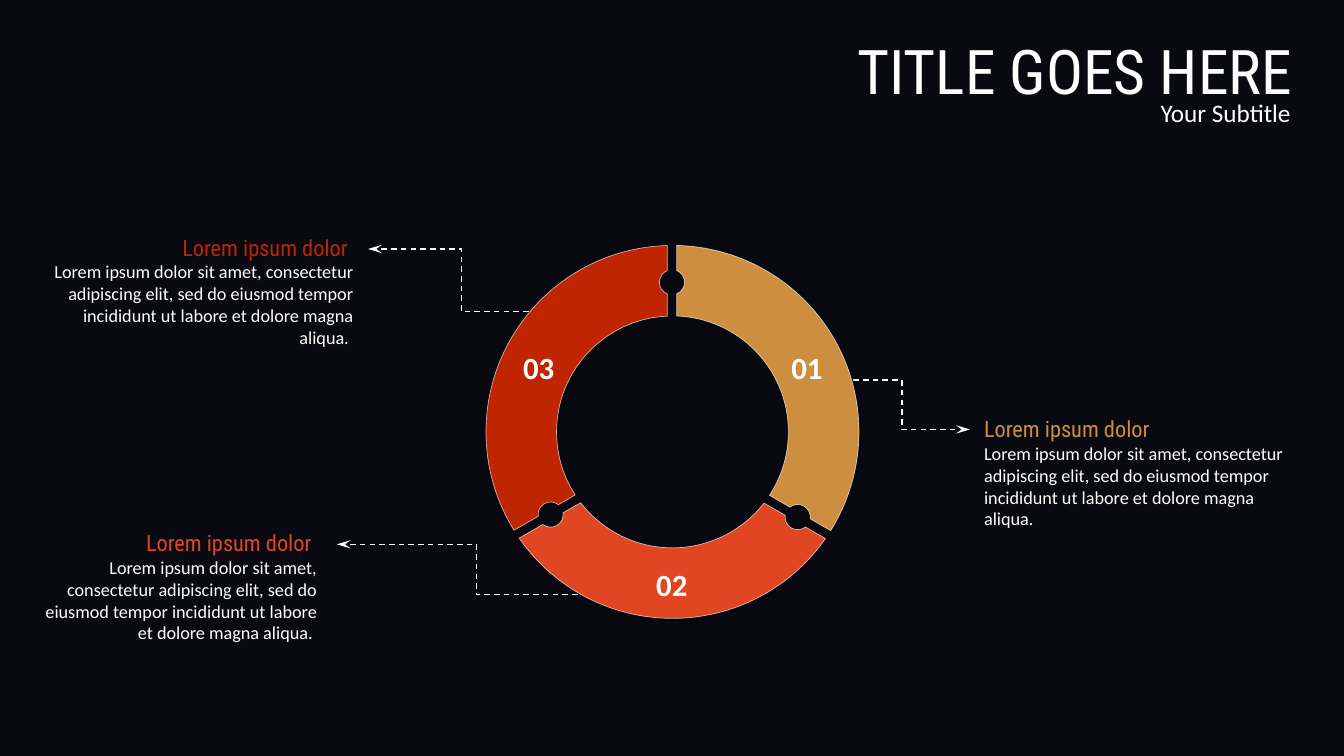
from dataclasses import dataclass
from math import asin, atan2, cos, hypot, pi, radians, sin, sqrt, tan

from lxml.etree import SubElement
from pptx import Presentation
from pptx.dml.color import RGBColor
from pptx.enum.dml import MSO_LINE_DASH_STYLE as Dash
from pptx.enum.shapes import MSO_CONNECTOR as Connector, MSO_SHAPE as Preset
from pptx.enum.text import MSO_AUTO_SIZE as AutoSize, PP_ALIGN as Align
from pptx.oxml.ns import qn
from pptx.util import Inches, Pt


@dataclass(frozen=True)
class Theme:
    background: str = "20213D"
    black: str = "000000"
    white: str = "FFFFFF"
    gold: str = "CE8E40"
    orange: str = "E04621"
    red: str = "BF2500"
    heading_font: str = "Roboto Condensed"
    body_font: str = "Calibri"
    title_size: float = 44
    subtitle_size: float = 18
    number_size: float = 22
    heading_size: float = 16
    body_size: float = 13


THEME = Theme()
LOREM = ("Lorem ipsum dolor sit amet, consectetur adipiscing elit, sed do eiusmod "
         "tempor incididunt ut labore et dolore magna aliqua.")

RING_CENTER = (6.67, 4.285)
GAP_HUB = (6.665, 4.41)
OUTER_RADIUS, INNER_RADIUS = 1.85, 1.15
HALF_GAP, NOTCH_RADIUS = 0.047, 0.125


@dataclass(frozen=True)
class Arc:
    center: tuple
    radius: float
    angles: list

    def point(self, angle, reach=0.0):
        return (Inches(self.center[0] + self.radius * (cos(angle) - reach * sin(angle))),
                Inches(self.center[1] + self.radius * (sin(angle) + reach * cos(angle))))

    def segments(self):
        result = [(self.point(self.angles[0]), [])]
        for start, end in zip(self.angles, self.angles[1:]):
            reach = 4 / 3 * tan((end - start) / 4)
            result.append((self.point(end), [self.point(start, reach), self.point(end, -reach)]))
        return result


@dataclass(frozen=True)
class Gap:
    degrees: float
    notch_distance: float

    def point(self, along, across=0.0):
        angle = radians(self.degrees)
        return (GAP_HUB[0] + along * cos(angle) - across * sin(angle),
                GAP_HUB[1] + along * sin(angle) + across * cos(angle))

    def crossing_angle(self, radius, side):
        angle = radians(self.degrees)
        x, y = self.point(0, side * HALF_GAP)
        x, y = x - RING_CENTER[0], y - RING_CENTER[1]
        toward = x * cos(angle) + y * sin(angle)
        along = sqrt(toward ** 2 - hypot(x, y) ** 2 + radius ** 2) - toward
        return atan2(y + along * sin(angle), x + along * cos(angle))

    def notch(self, side):
        edge = asin(HALF_GAP / NOTCH_RADIUS)
        turns = [edge, pi / 2, pi - edge][::-side]
        return Arc(self.point(self.notch_distance), NOTCH_RADIUS,
                   [radians(self.degrees) + side * turn for turn in turns])


def ring_angles(radius, first, last, middle):
    start = first.crossing_angle(radius, 1)
    end = last.crossing_angle(radius, -1)
    return [start, middle, end if end > start else end + 2 * pi]


def ring_piece(first, last, middle):
    outer = Arc(RING_CENTER, OUTER_RADIUS, ring_angles(OUTER_RADIUS, first, last, middle))
    inner = Arc(RING_CENTER, INNER_RADIUS, ring_angles(INNER_RADIUS, first, last, middle)[::-1])
    arcs = [outer, last.notch(-1), inner, first.notch(1)]
    return [segment for arc in arcs for segment in arc.segments()]


def write(paragraph, text, *, size, color=THEME.white, font=THEME.body_font,
          bold=False, align=Align.LEFT):
    paragraph.alignment = align
    run = paragraph.add_run()
    run.text = text
    run.font.size = Pt(size)
    run.font.name = font
    run.font.bold = bold
    run.font.color.rgb = RGBColor.from_string(color)


def paint(fill, color, opacity=100):
    fill.solid()
    fill.fore_color.rgb = RGBColor.from_string(color)
    if opacity < 100:
        choice = fill._xPr.find(qn("a:solidFill"))
        SubElement(choice[0], qn("a:alpha"), val=str(opacity * 1000))


class Deck:
    def __init__(self, theme):
        self.theme = theme
        self.presentation = Presentation()
        self.presentation.slide_width = Inches(13.33)
        self.presentation.slide_height = Inches(7.5)
        self.slide = self.presentation.slides.add_slide(self.presentation.slide_layouts[6])
        paint(self.slide.background.fill, theme.background)

    def shade(self):
        shape = self.slide.shapes.add_shape(
            Preset.RECTANGLE, 0, 0, self.presentation.slide_width, self.presentation.slide_height)
        paint(shape.fill, self.theme.black, 70)
        shape.line.fill.background()
        shape.shadow.inherit = False

    def text_frame(self, box, parent=None, wrap=True, insets=(0.1, 0.05)):
        shapes = (parent or self.slide).shapes
        frame = shapes.add_textbox(*map(Inches, box)).text_frame
        frame.word_wrap = wrap
        frame.auto_size = AutoSize.SHAPE_TO_FIT_TEXT
        frame.margin_left = frame.margin_right = Inches(insets[0])
        frame.margin_top = frame.margin_bottom = Inches(insets[1])
        return frame

    def title(self, title, subtitle):
        group = self.slide.shapes.add_group_shape()
        frame = self.text_frame((6.9, 0.28, 6.02, 0.84), group)
        write(frame.paragraphs[0], title, size=self.theme.title_size,
              font=self.theme.heading_font, align=Align.RIGHT)
        frame = self.text_frame((8.37, 0.92, 4.53, 0.4), group)
        write(frame.paragraphs[0], subtitle, size=self.theme.subtitle_size, align=Align.RIGHT)

    def callout(self, box, color, align=Align.LEFT, ending=""):
        frame = self.text_frame(box, insets=(0.07, 0.03))
        write(frame.paragraphs[0], "Lorem ipsum dolor" + ending, size=self.theme.heading_size,
              font=self.theme.heading_font, color=color, align=align)
        write(frame.add_paragraph(), LOREM + ending, size=self.theme.body_size, align=align)

    def leader(self, ends, arrow):
        connector = self.slide.shapes.add_connector(Connector.ELBOW, *map(Inches, ends))
        paint(connector.line.fill, self.theme.white)
        connector.line.width = Pt(1)
        connector.line.dash_style = Dash.DASH
        properties = connector._element.spPr
        SubElement(properties.find(qn("a:ln")), qn(arrow), type="stealth", w="med", len="lg")
        SubElement(properties, qn("a:effectLst"))

    def curved_shape(self, parent, segments):
        anchors = [anchor for anchor, _ in segments]
        builder = parent.shapes.build_freeform(*anchors[0])
        builder.add_line_segments(anchors[1:], close=True)
        shape = builder.convert_to_shape()
        lines = list(shape._element.iter(qn("a:lnTo")))
        for line, (_, controls) in zip(lines, segments[1:]):
            if controls:
                end = line[0]
                for x, y in controls:
                    SubElement(line, qn("a:pt"), x=str(x - shape.left), y=str(y - shape.top))
                line.append(end)
                line.tag = qn("a:cubicBezTo")
        return shape

    def piece(self, segments, color, number, box):
        group = self.slide.shapes.add_group_shape()
        shape = self.curved_shape(group, segments)
        paint(shape.fill, color)
        paint(shape.line.fill, self.theme.white, 65)
        shape.line.width = Pt(0.5)
        shape.shadow.inherit = False
        effects = shape._element.spPr.find(qn("a:effectLst"))
        shadow = SubElement(effects, qn("a:outerShdw"), blurRad=str(Pt(5)),
                            algn="ctr", rotWithShape="0")
        tint = SubElement(shadow, qn("a:srgbClr"), val=self.theme.black)
        SubElement(tint, qn("a:alpha"), val="40000")
        frame = self.text_frame(box, group, wrap=False)
        write(frame.paragraphs[0], number, size=self.theme.number_size, bold=True)


def main():
    deck = Deck(THEME)
    deck.shade()
    deck.leader((3.65, 2.47, 5.5, 3.09), "a:headEnd")
    deck.leader((8.27, 3.77, 9.62, 4.26), "a:tailEnd")
    deck.leader((3.34, 5.4, 6.11, 5.9), "a:headEnd")
    deck.callout((9.69, 4.09, 3.29, 1.21), THEME.gold)
    deck.callout((0.26, 2.29, 3.31, 1.21), THEME.red, Align.RIGHT, " ")
    deck.callout((0.24, 5.22, 2.97, 1.21), THEME.orange, Align.RIGHT, " ")

    gaps = [Gap(-90, 1.61), Gap(30, 1.44), Gap(150, 1.39)]
    pieces = [(THEME.gold, 7.75, 3.41), (THEME.orange, 6.41, 5.56), (THEME.red, 5.09, 3.41)]
    for index, (color, left, top) in enumerate(pieces):
        segments = ring_piece(gaps[index], gaps[(index + 1) % len(gaps)], index * pi / 2)
        deck.piece(segments, color, f"{index + 1:02}", (left, top, 0.52, 0.47))

    deck.title("TITLE GOES HERE", "Your Subtitle")
    deck.presentation.save("out.pptx")


if __name__ == "__main__":
    main()
